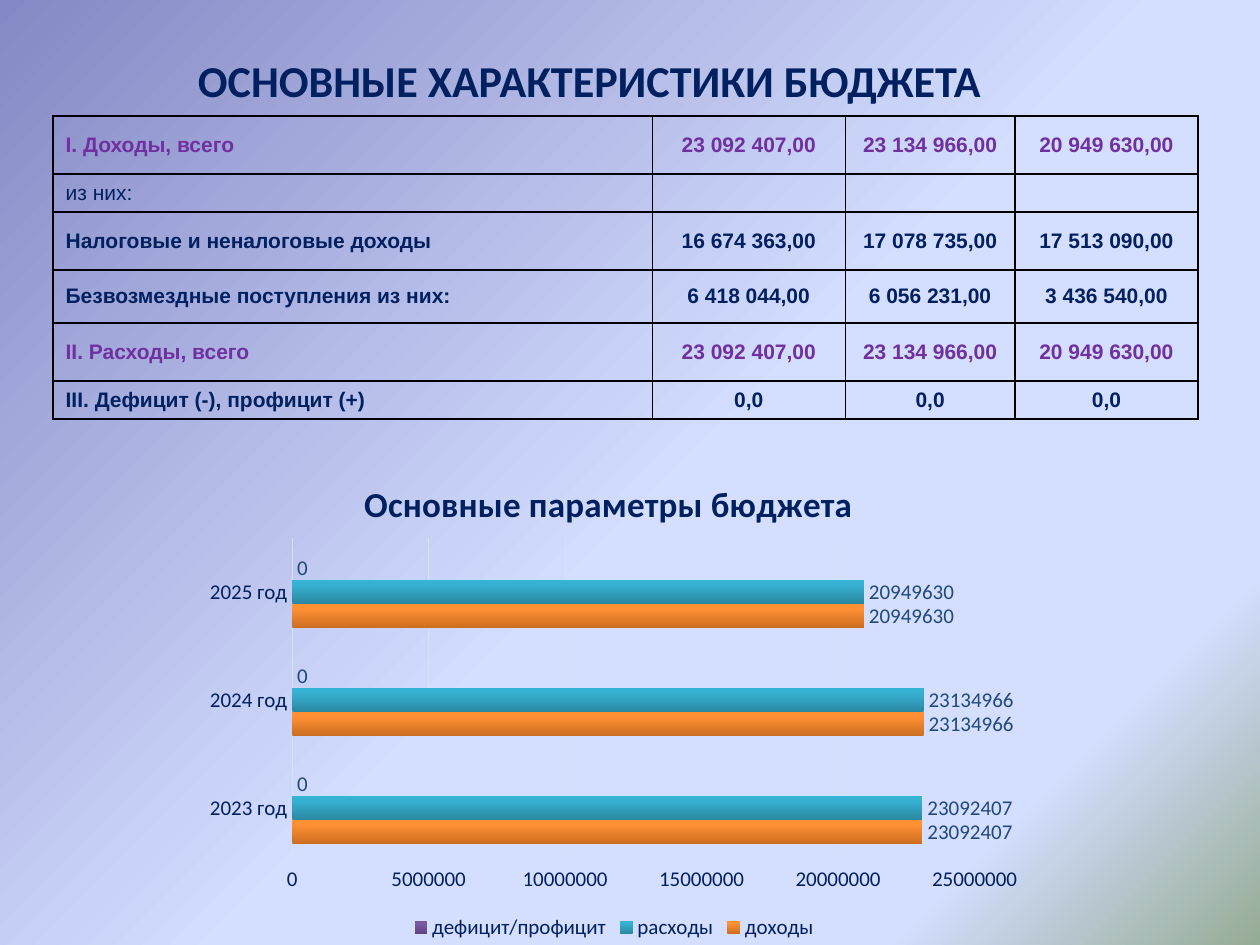
from lxml.etree import SubElement
from pptx import Presentation
from pptx.chart.data import CategoryChartData
from pptx.dml.color import RGBColor
from pptx.enum.chart import XL_CHART_TYPE as ChartType
from pptx.enum.chart import XL_LABEL_POSITION as LabelPosition
from pptx.enum.chart import XL_LEGEND_POSITION as LegendPosition
from pptx.enum.chart import XL_TICK_MARK as TickMark
from pptx.enum.text import MSO_ANCHOR as Anchor
from pptx.enum.text import PP_ALIGN as Align
from pptx.oxml.ns import qn
from pptx.util import Cm, Pt

NAVY, PURPLE, LABEL_BLUE, PALE = "002060", "7030A0", "1F497D", "D4E3F4"

TITLE = "ОСНОВНЫЕ ХАРАКТЕРИСТИКИ БЮДЖЕТА"
BACKGROUND = [(0, "8488C4"), (53, "D4DEFF"), (83, "D4DEFF"), (100, "96AB94")]

COLUMN_WIDTHS = [12.08, 3.89, 3.42, 3.69]
ROWS = [  # height, colour, bold, texts
    (1.17, PURPLE, True, ["I. Доходы, всего", "23 092 407,00", "23 134 966,00", "20 949 630,00"]),
    (0.73, NAVY, False, ["из них:", "", "", ""]),
    (1.17, NAVY, True, ["Налоговые и неналоговые доходы",
                        "16 674 363,00", "17 078 735,00", "17 513 090,00"]),
    (1.07, NAVY, True, ["Безвозмездные поступления из них:",
                        "6 418 044,00", "6 056 231,00", "3 436 540,00"]),
    (1.17, PURPLE, True, ["II. Расходы, всего", "23 092 407,00", "23 134 966,00", "20 949 630,00"]),
    (0.73, NAVY, True, ["III. Дефицит (-), профицит (+)", "0,0", "0,0", "0,0"]),
]

CHART_TITLE = "Основные параметры бюджета"
YEARS = ["2023 год", "2024 год", "2025 год"]
TOTALS = [23092407, 23134966, 20949630]
SERIES = [
    ("доходы", TOTALS, [(0, "CC6E20"), (80, "FF9034"), (100, "FF9136")]),
    ("расходы", TOTALS, [(0, "2A88A2"), (80, "37B1D2"), (100, "34B4D6")]),
    ("дефицит/профицит", [0, 0, 0], [(0, "5F4480"), (80, "7B58A6"), (100, "7C57A8")]),
]


def color(value):
    return RGBColor.from_string(value)


def set_font(font, size, value, bold=False, name="Calibri"):
    font.size, font.bold, font.name = Pt(size), bold, name
    font.color.rgb = color(value)


def set_gradient(fill, element, stops, angle):
    """Fill with any number of stops; angle is counter-clockwise."""
    fill.gradient()
    fill.gradient_angle = angle
    stop_list = next(element.iter(qn("a:gsLst")))
    for old_stop in list(stop_list):
        stop_list.remove(old_stop)
    for percent, value in stops:
        stop = SubElement(stop_list, qn("a:gs"), pos=str(percent * 1000))
        SubElement(stop, qn("a:srgbClr"), val=value)


def add_borders(cell):
    properties = cell._tc.get_or_add_tcPr()
    for index, side in enumerate(("a:lnL", "a:lnR", "a:lnT", "a:lnB")):
        line = SubElement(properties, qn(side), w=str(Pt(1)))
        fill = SubElement(line, qn("a:solidFill"))
        SubElement(fill, qn("a:srgbClr"), val="000000")
        properties.insert(index, line)


def set_layout(element, index, **values):
    """Place a chart part by fractions of the chart's size."""
    for old_layout in element.findall(qn("c:layout")):
        element.remove(old_layout)
    layout = SubElement(element, qn("c:layout"))
    element.insert(index, layout)
    manual = SubElement(layout, qn("c:manualLayout"))
    if "w" in values:
        SubElement(manual, qn("c:layoutTarget"), val="inner")
    for key in ("x", "y"):
        SubElement(manual, qn(f"c:{key}Mode"), val="edge")
    for key, value in values.items():
        SubElement(manual, qn(f"c:{key}"), val=str(value))


def add_title(slide):
    frame = slide.shapes.add_textbox(Cm(1.09), Cm(0.91), Cm(21.59), Cm(1.4)).text_frame
    frame.word_wrap = True
    frame.vertical_anchor = Anchor.MIDDLE
    paragraph = frame.paragraphs[0]
    paragraph.text = TITLE
    paragraph.alignment = Align.CENTER
    set_font(paragraph.font, 25.2, NAVY, True)


def add_budget_table(slide):
    table = slide.shapes.add_table(
        len(ROWS), len(COLUMN_WIDTHS), Cm(1.07), Cm(2.34),
        Cm(sum(COLUMN_WIDTHS)), Cm(sum(row[0] for row in ROWS))).table
    table.first_row = table.horz_banding = False
    for column, width in zip(table.columns, COLUMN_WIDTHS):
        column.width = Cm(width)
    for row, (height, value, bold, texts) in zip(table.rows, ROWS):
        row.height = Cm(height)
        for index, (cell, text) in enumerate(zip(row.cells, texts)):
            cell.fill.background()
            cell.vertical_anchor = Anchor.MIDDLE
            add_borders(cell)
            paragraph = cell.text_frame.paragraphs[0]
            paragraph.text = text
            paragraph.alignment = Align.CENTER if index else Align.LEFT
            set_font(paragraph.font, 12, value, bold, "Arial")
            if not text:  # keeps the empty row low
                SubElement(paragraph._p, qn("a:endParaRPr"), sz="1200")


def add_budget_chart(slide):
    data = CategoryChartData()
    data.categories = YEARS
    for name, values, _ in SERIES:
        data.add_series(name, values)
    chart = slide.shapes.add_chart(ChartType.BAR_CLUSTERED, Cm(3.91), Cm(8.92),
                                   Cm(16.94), Cm(10.13), data).chart
    set_font(chart.font, 12, NAVY)

    paragraph = chart.chart_title.text_frame.paragraphs[0]
    run = paragraph.add_run()
    run.text = CHART_TITLE
    set_font(run.font, 20, NAVY, True)
    set_layout(chart.chart_title._element, 1, x=0.195, y=0.06)
    set_layout(chart.plots[0]._element.getparent(), 0, x=0.117, y=0.19, w=0.812, h=0.645)

    chart.has_legend = True
    chart.legend.position = LegendPosition.BOTTOM
    chart.legend.include_in_layout = False
    set_font(chart.legend.font, 12, NAVY)

    years, amounts = chart.category_axis, chart.value_axis
    for axis in (years, amounts):
        axis.major_tick_mark = axis.minor_tick_mark = TickMark.NONE
        set_font(axis.tick_labels.font, 12, NAVY)
    amounts.minimum_scale, amounts.maximum_scale, amounts.major_unit = 0, 25000000, 5000000
    amounts.format.line.fill.background()
    for line in (years.format.line, amounts.major_gridlines.format.line):
        line.color.rgb = color(PALE)
        line.width = Pt(0.75)

    plot = chart.plots[0]
    plot.gap_width, plot.overlap, plot.vary_by_categories = 150, 0, False
    for series, (_, _, stops) in zip(plot.series, SERIES):
        set_gradient(series.format.fill, series._element, stops, 90)
        labels = series.data_labels
        labels.show_value = True
        labels.position = LabelPosition.OUTSIDE_END
        set_font(labels.font, 12, LABEL_BLUE)


def main():
    presentation = Presentation()
    presentation.slide_width, presentation.slide_height = Cm(25.4), Cm(19.05)
    slide = presentation.slides.add_slide(presentation.slide_layouts[6])
    set_gradient(slide.background.fill, slide.element, BACKGROUND, 315)
    add_title(slide)
    add_budget_table(slide)
    add_budget_chart(slide)
    presentation.save("out.pptx")


if __name__ == "__main__":
    main()
